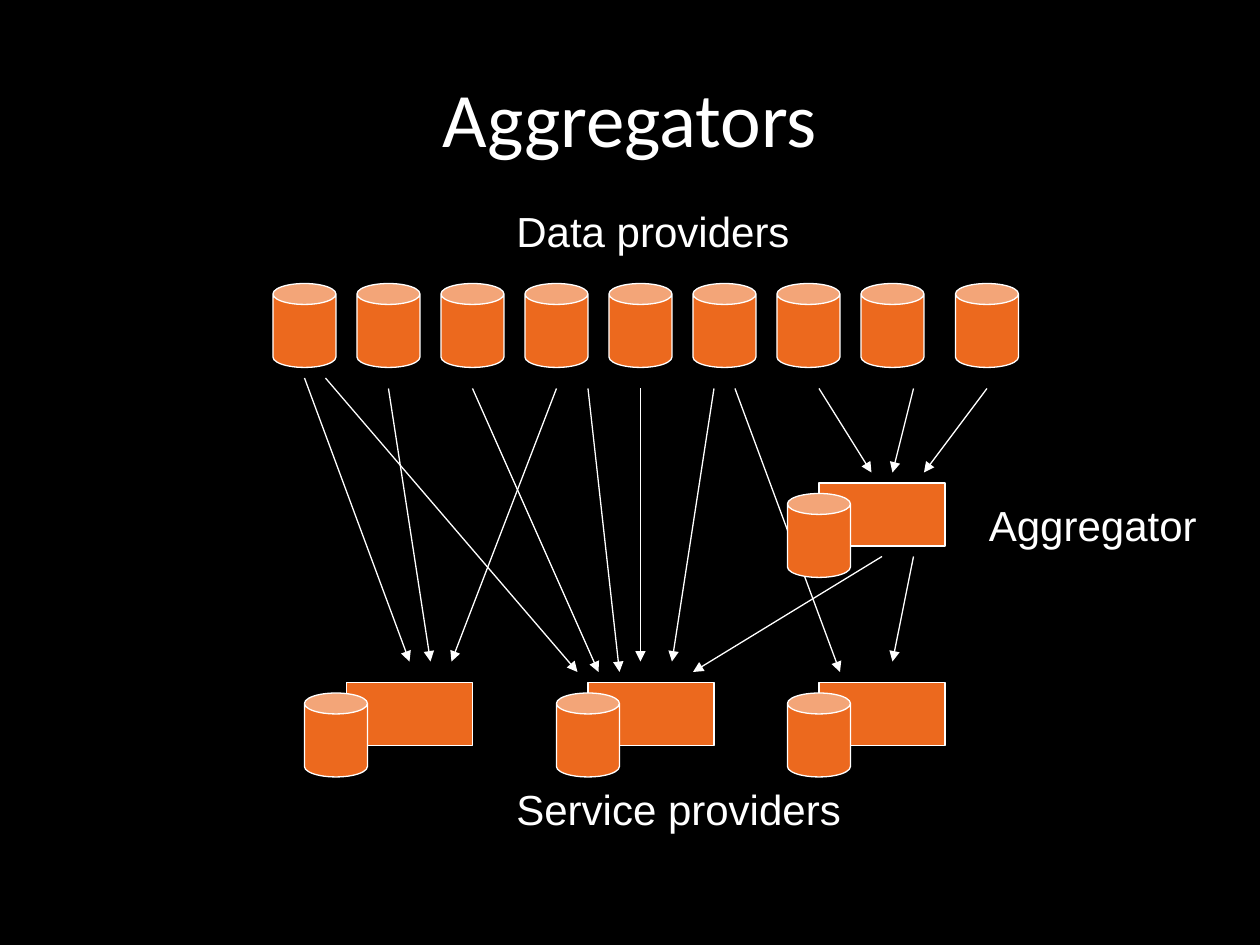
import pptx
import pptx.util
import pptx.dml.color
import pptx.enum.dml
import pptx.enum.shapes
import pptx.enum.text
import pptx.oxml.ns
import lxml.etree

# Content: positions are in grid cells, twelve to the inch
CELL = 1 / 12
WHITE, ORANGE, BLACK = "FFFFFF", "EC691E", "000000"
CAN_SIZE, BOX_SIZE = (6, 8), (12, 6)

PROVIDER_TOP = 27
PROVIDER_LEFTS = [26 + 8 * column for column in range(8)] + [91]

# Each server: its box, then the left edge of the can in front of it
SERVERS = [((33, 65), 29), ((56, 65), 53), ((78, 65), 75), ((78, 46), 75)]

# Arrows run from (x, y) to (x, y)
ARROWS = [
    # Data providers to the first service provider
    ((29, 36), (39, 63)), ((37, 37), (41, 63)), ((53, 37), (43, 63)),
    # Data providers to the second service provider
    ((31, 36), (55, 64)), ((45, 37), (57, 64)), ((56, 37), (59, 64)),
    ((61, 37), (61, 63)), ((68, 37), (64, 63)),
    # Data provider to the third service provider
    ((70, 37), (80, 64)),
    # Data providers to the aggregator
    ((78, 37), (83, 45)), ((87, 37), (85, 45)), ((94, 37), (88, 45)),
    # Aggregator to service providers
    ((84, 53), (66, 64)), ((87, 53), (85, 63)),
]

# Labels: text, left, top, width
LABELS = [
    ("Data providers", 48, 19, 28.4),
    ("Service providers", 48, 74, 33.4),
    ("Aggregator", 93, 47, 22.2),
]


def cells(*values):
    return [pptx.util.Inches(value * CELL) for value in values]


def color(text):
    return pptx.dml.color.RGBColor.from_string(text)


def set_line(line):
    line.color.rgb = color(WHITE)
    line.width = pptx.util.Pt(0.75)


def add_block(slide, kind, position, size):
    shape = slide.shapes.add_shape(kind, *cells(*position, *size))
    shape.shadow.inherit = False
    shape.fill.solid()
    shape.fill.fore_color.rgb = color(ORANGE)
    set_line(shape.line)
    return shape


def add_can(slide, left, top):
    can = add_block(slide, pptx.enum.shapes.MSO_SHAPE.CAN, (left, top), CAN_SIZE)
    can.adjustments[0] = 0.333


def add_arrow(slide, start, end):
    arrow = slide.shapes.add_connector(
        pptx.enum.shapes.MSO_CONNECTOR.STRAIGHT, *cells(*start, *end))
    set_line(arrow.line)
    head = lxml.etree.SubElement(
        arrow.line._get_or_add_ln(), pptx.oxml.ns.qn("a:tailEnd"))
    head.set("type", "triangle")
    lxml.etree.SubElement(
        arrow._element.spPr, pptx.oxml.ns.qn("a:effectLst"))


def add_text(slide, text, area, font_name, size):
    text_box = slide.shapes.add_textbox(*cells(*area))
    paragraph = text_box.text_frame.paragraphs[0]
    paragraph.text = text
    paragraph.font.name = font_name
    paragraph.font.size = pptx.util.Pt(size)
    paragraph.font.color.rgb = color(WHITE)
    return text_box.text_frame


def main():
    presentation = pptx.Presentation()
    presentation.slide_width = pptx.util.Inches(10)
    presentation.slide_height = pptx.util.Inches(7.5)
    slide = presentation.slides.add_slide(presentation.slide_layouts[6])
    slide.background.fill.solid()
    slide.background.fill.fore_color.rgb = color(BLACK)

    # Title
    title = add_text(slide, "Aggregators", (6, 3.6, 108, 15), "Calibri", 44)
    title.word_wrap = True
    title.vertical_anchor = pptx.enum.text.MSO_ANCHOR.MIDDLE
    title.paragraphs[0].alignment = pptx.enum.text.PP_ALIGN.CENTER

    # Row of data providers
    for left in PROVIDER_LEFTS:
        add_can(slide, left, PROVIDER_TOP)

    # Arrows lie behind the servers
    for start, end in ARROWS:
        add_arrow(slide, start, end)

    # Service providers and aggregator
    for (left, top), can_left in SERVERS:
        add_block(slide, pptx.enum.shapes.MSO_SHAPE.RECTANGLE, (left, top), BOX_SIZE)
        add_can(slide, can_left, top + 1)

    # Labels
    for text, left, top, width in LABELS:
        frame = add_text(slide, text, (left, top, width, 6), "Arial", 24)
        frame.word_wrap = False
        frame.auto_size = pptx.enum.text.MSO_AUTO_SIZE.SHAPE_TO_FIT_TEXT

    presentation.save("out.pptx")


if __name__ == "__main__":
    main()
